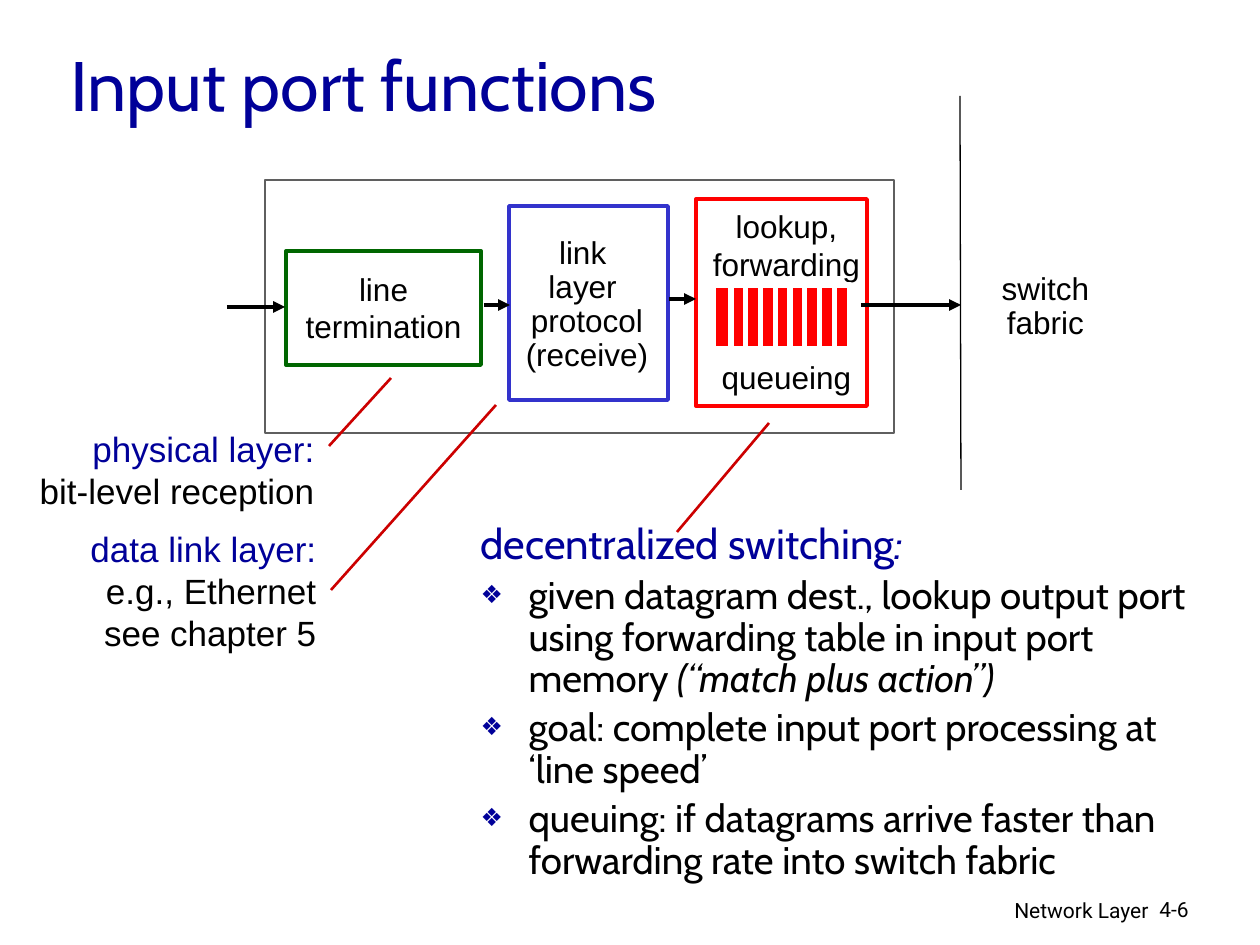
from dataclasses import dataclass

from lxml.etree import SubElement
from pptx import Presentation
from pptx.dml.color import RGBColor
from pptx.enum.shapes import MSO_CONNECTOR as Connector, MSO_SHAPE as Preset
from pptx.enum.text import MSO_ANCHOR as Anchor, MSO_AUTO_SIZE as AutoSize, PP_ALIGN as Align
from pptx.oxml.ns import qn
from pptx.util import Inches, Pt

PX = Inches(1) / 126


def px(*lengths):
    return [round(length * PX) for length in lengths]


def apply(target, **values):
    for name, value in values.items():
        setattr(target, name, value)


@dataclass(frozen=True)
class Theme:
    black: str = "000000"
    white: str = "FFFFFF"
    navy: str = "000099"
    grey: str = "5F5F5F"
    green: str = "006600"
    blue: str = "3333CC"
    red: str = "FF0000"
    pointer: str = "CC0000"
    diagram_font: str = "Arial"
    text_font: str = "Cabin"
    footer_font: str = "Roboto"
    title_size: int = 40
    heading_size: int = 24
    body_size: int = 22
    note_size: int = 20
    label_size: int = 18
    footer_size: int = 12


class SlideBuilder:
    def __init__(self, slide, theme):
        self.slide, self.theme = slide, theme

    def run(self, paragraph, text, size, font, color, italic=False):
        run = paragraph.add_run()
        run.text = text
        apply(run.font, size=Pt(size), name=font, italic=italic)
        run.font.color.rgb = RGBColor.from_string(color)

    def lines(self, frame, lines, size, font, colors=(), **values):
        """One paragraph a line; lines past the given colors are black."""
        for index, text in enumerate(lines):
            paragraph = frame.add_paragraph() if index else frame.paragraphs[0]
            apply(paragraph, **values)
            color = colors[index] if index < len(colors) else self.theme.black
            self.run(paragraph, text, size, font, color)

    def text(self, box, lines, size, font, colors=(), wrap=False, anchor=Anchor.TOP, **values):
        frame = self.slide.shapes.add_textbox(*px(*box)).text_frame
        apply(frame, word_wrap=wrap, vertical_anchor=anchor)
        self.lines(frame, lines, size, font, colors, **values)
        return frame

    def label(self, box, lines, **values):
        theme = self.theme
        return self.text(box, lines, theme.label_size, theme.diagram_font,
                         alignment=Align.CENTER, **values)

    def box(self, box, fill, line, width):
        shape = self.slide.shapes.add_shape(Preset.RECTANGLE, *px(*box))
        shape.shadow.inherit = False
        shape.fill.solid()
        shape.fill.fore_color.rgb = RGBColor.from_string(fill)
        shape.line.color.rgb = RGBColor.from_string(line)
        shape.line.width = Pt(width)

    def line(self, start, end, color, width, arrow=False):
        connector = self.slide.shapes.add_connector(Connector.STRAIGHT, *px(*start, *end))
        connector.line.color.rgb = RGBColor.from_string(color)
        connector.line.width = Pt(width)
        properties = connector._element.spPr
        if arrow:
            SubElement(properties.find(qn("a:ln")), qn("a:tailEnd"), type="triangle")
        SubElement(properties, qn("a:effectLst"))

    def placeholder(self, shape, box, anchor):
        for name, value in zip(("left", "top", "width", "height"), px(*box)):
            setattr(shape, name, value)
        apply(shape.text_frame, word_wrap=True, auto_size=AutoSize.NONE, vertical_anchor=anchor)
        return shape.text_frame

    def title(self, box, text):
        theme = self.theme
        frame = self.placeholder(self.slide.shapes.title, box, Anchor.MIDDLE)
        self.lines(frame, [text], theme.title_size, theme.text_font, [theme.navy],
                   alignment=Align.LEFT)

    def bullet(self, properties, char):
        color = SubElement(properties, qn("a:buClr"))
        SubElement(color, qn("a:srgbClr"), val=self.theme.navy)
        SubElement(properties, qn("a:buSzPct"), val="65000")
        SubElement(properties, qn("a:buChar"), char=char)

    def body(self, box, heading, items):
        """Heading and items are lists of (text, italic) pieces."""
        theme = self.theme
        frame = self.placeholder(self.slide.placeholders[1], box, Anchor.TOP)
        indent = px(48)[0]
        for index, pieces in enumerate([heading, *items]):
            paragraph = frame.add_paragraph() if index else frame.paragraphs[0]
            apply(paragraph, alignment=Align.LEFT, line_spacing=0.9, space_before=Pt(4.4))
            properties = paragraph._p.get_or_add_pPr()
            properties.set("marL", str(indent))
            properties.set("indent", str(-indent))
            if index:
                self.bullet(properties, "❖")
                size, color = theme.body_size, theme.black
            else:
                SubElement(properties, qn("a:buNone"))
                size, color = theme.heading_size, theme.navy
            for text, italic in pieces:
                self.run(paragraph, text, size, theme.text_font, color, italic)


def main():
    presentation = Presentation()
    apply(presentation, slide_width=Inches(10), slide_height=Inches(7.5))
    theme = Theme()
    builder = SlideBuilder(presentation.slides.add_slide(presentation.slide_layouts[1]), theme)

    # Title and footer
    builder.title((58, 41, 1071, 84), "Input port functions")
    footer = theme.footer_size, theme.footer_font
    builder.text((762, 891, 399, 39), ["Network Layer"], *footer, wrap=True, alignment=Align.RIGHT)
    builder.text((1147, 890, 93, 38), ["4-6"], *footer, wrap=True)

    # Input port and its three stages
    for box, color, width in (
        ((265, 180, 629, 253), theme.grey, 1.5),
        ((286, 251, 195, 114), theme.green, 2.25),
        ((509, 206, 159, 194), theme.blue, 2.25),
        ((696, 199, 171, 207), theme.red, 2.25),
    ):
        builder.box(box, theme.white, color, width)
    builder.label((286, 250, 195, 115), ["line", "termination"], anchor=Anchor.MIDDLE)
    builder.label((502, 248, 170, 115), ["link ", "layer ", "protocol", "(receive)"],
                  anchor=Anchor.MIDDLE, line_spacing=0.9)
    lookup = builder.label((700, 201, 173, 202), ["lookup,", "forwarding", "queueing"])
    lookup.paragraphs[-1].space_before = Pt(43)

    # Data flow
    for left, right, y in ((227, 285, 307), (484, 510, 305), (669, 696, 299), (861, 961, 305)):
        builder.line((left, y), (right, y), theme.black, 2.25, arrow=True)

    # Queue, cut into slots
    builder.box((713, 285, 137, 64), theme.red, theme.white, 3)
    for slot in range(8):
        x = 731 + 14.75 * slot
        builder.line((x, 286), (x, 347), theme.white, 3)

    # Switch fabric
    builder.line((960, 96), (961, 490), theme.black, 0.75)
    builder.label((973, 250, 145, 115), ["switch", "fabric"],
                  anchor=Anchor.MIDDLE, line_spacing=0.9)

    # Notes on the layers
    for box, lines in (
        ((27, 421, 300, 97), ["physical layer:", "bit-level reception"]),
        ((78, 521, 251, 139), ["data link layer:", "e.g., Ethernet", "see chapter 5"]),
    ):
        builder.text(box, lines, theme.note_size, theme.diagram_font, [theme.navy],
                     alignment=Align.RIGHT)

    # Decentralized switching
    builder.body(
        (468, 517, 752, 368),
        [("decentralized switching", False), (":", True)],
        [
            [("given datagram dest., lookup output port using forwarding table "
              "in input port memory ", False), ("(“match plus action”)", True)],
            [("goal: complete input port processing at ‘line speed’", False)],
            [("queuing: if datagrams arrive faster than forwarding rate "
              "into switch fabric", False)],
        ],
    )

    # Pointers from the notes to the stages
    for start, end in (((329, 446), (391, 378)), ((331, 590), (496, 405)), ((677, 532), (769, 423))):
        builder.line(start, end, theme.pointer, 1.5)

    presentation.save("out.pptx")


if __name__ == "__main__":
    main()
